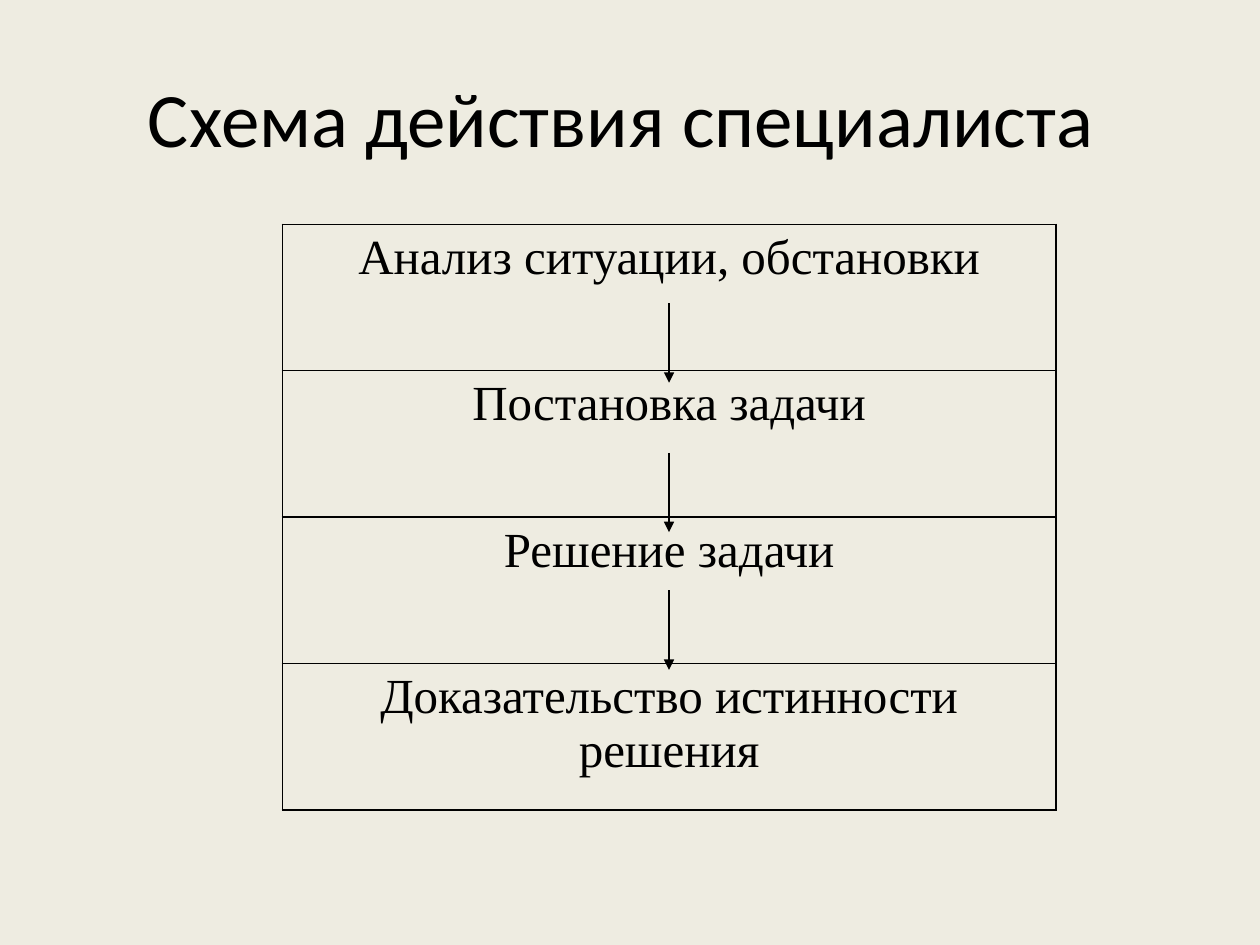
from dataclasses import dataclass

from lxml import etree
from pptx import Presentation
from pptx.dml.color import RGBColor
from pptx.enum.shapes import MSO_CONNECTOR
from pptx.enum.text import MSO_ANCHOR, PP_ALIGN
from pptx.oxml.ns import qn
from pptx.util import Inches, Pt

STRAIGHT = MSO_CONNECTOR.STRAIGHT
CENTER = PP_ALIGN.CENTER
MIDDLE = MSO_ANCHOR.MIDDLE

BACKGROUND, INK = "EEECE1", "000000"
SLIDE_WIDTH, SLIDE_HEIGHT = 10, 7.5

# Table grid, in inches
TABLE_LEFT, TABLE_TOP = 2.24, 1.78
COLUMN_WIDTH, ROW_HEIGHT = 6.14, 1.1625
ARROW_LENGTH = 0.63
BORDER_POINTS, ARROW_POINTS = 1, 0.75


@dataclass
class Step:
    text: str
    arrow_top: float | None = None  # share of the row height above the arrow


STEPS = [
    Step("Анализ ситуации, обстановки", 0.54),
    Step("Постановка задачи", 0.56),
    Step("Решение задачи", 0.50),
    Step("Доказательство истинности решения"),
]
TITLE_FORMAT = {"name": "Calibri", "size": Pt(44), "bold": False}
STEP_FORMAT = {"name": "Times New Roman", "size": Pt(28), "bold": False}


def color(value: str) -> RGBColor:
    return RGBColor.from_string(value)


def write_text(text_frame, text: str, font_format: dict) -> None:
    text_frame.word_wrap = True
    paragraph = text_frame.paragraphs[0]
    paragraph.alignment = CENTER
    run = paragraph.add_run()
    run.text = text
    for name, value in font_format.items():
        setattr(run.font, name, value)
    run.font.color.rgb = color(INK)


def add_title(slide, text: str) -> None:
    margin = 0.05 * SLIDE_WIDTH
    shape = slide.shapes.add_textbox(
        Inches(margin), Inches(0.04 * SLIDE_HEIGHT),
        Inches(SLIDE_WIDTH - 2 * margin), Inches(SLIDE_HEIGHT / 6))
    write_text(shape.text_frame, text, TITLE_FORMAT)
    shape.text_frame.vertical_anchor = MIDDLE


def add_borders(cell) -> None:
    properties = cell._tc.get_or_add_tcPr()
    for position, side in enumerate(("lnL", "lnR", "lnT", "lnB")):
        line = etree.Element(qn(f"a:{side}"), w=str(Pt(BORDER_POINTS)))
        fill = etree.SubElement(line, qn("a:solidFill"))
        etree.SubElement(fill, qn("a:srgbClr"), val=INK)
        properties.insert(position, line)


def add_steps(slide, steps: list[Step]) -> None:
    table = slide.shapes.add_table(
        len(steps), 1, Inches(TABLE_LEFT), Inches(TABLE_TOP),
        Inches(COLUMN_WIDTH), Inches(ROW_HEIGHT * len(steps))).table
    table.first_row = table.horz_banding = False
    for row, step in enumerate(steps):
        cell = table.cell(row, 0)
        write_text(cell.text_frame, step.text, STEP_FORMAT)
        cell.fill.background()
        add_borders(cell)


def add_arrow(slide, row: int, step: Step) -> None:
    x = Inches(TABLE_LEFT + COLUMN_WIDTH / 2)
    top = TABLE_TOP + (row + step.arrow_top) * ROW_HEIGHT
    arrow = slide.shapes.add_connector(
        STRAIGHT, x, Inches(top), x, Inches(top + ARROW_LENGTH))
    arrow.line.color.rgb = color(INK)
    arrow.line.width = Pt(ARROW_POINTS)
    etree.SubElement(arrow.line._get_or_add_ln(), qn("a:tailEnd"), type="triangle")
    etree.SubElement(arrow._element.spPr, qn("a:effectLst"))


def main() -> None:
    presentation = Presentation()
    presentation.slide_width = Inches(SLIDE_WIDTH)
    presentation.slide_height = Inches(SLIDE_HEIGHT)
    slide = presentation.slides.add_slide(presentation.slide_layouts[6])
    slide.background.fill.solid()
    slide.background.fill.fore_color.rgb = color(BACKGROUND)

    # Title and table of steps
    add_title(slide, "Схема действия специалиста ")
    add_steps(slide, STEPS)

    # Arrows from each step to the next
    for row, step in enumerate(STEPS):
        if step.arrow_top is not None:
            add_arrow(slide, row, step)

    presentation.save("out.pptx")


if __name__ == "__main__":
    main()
